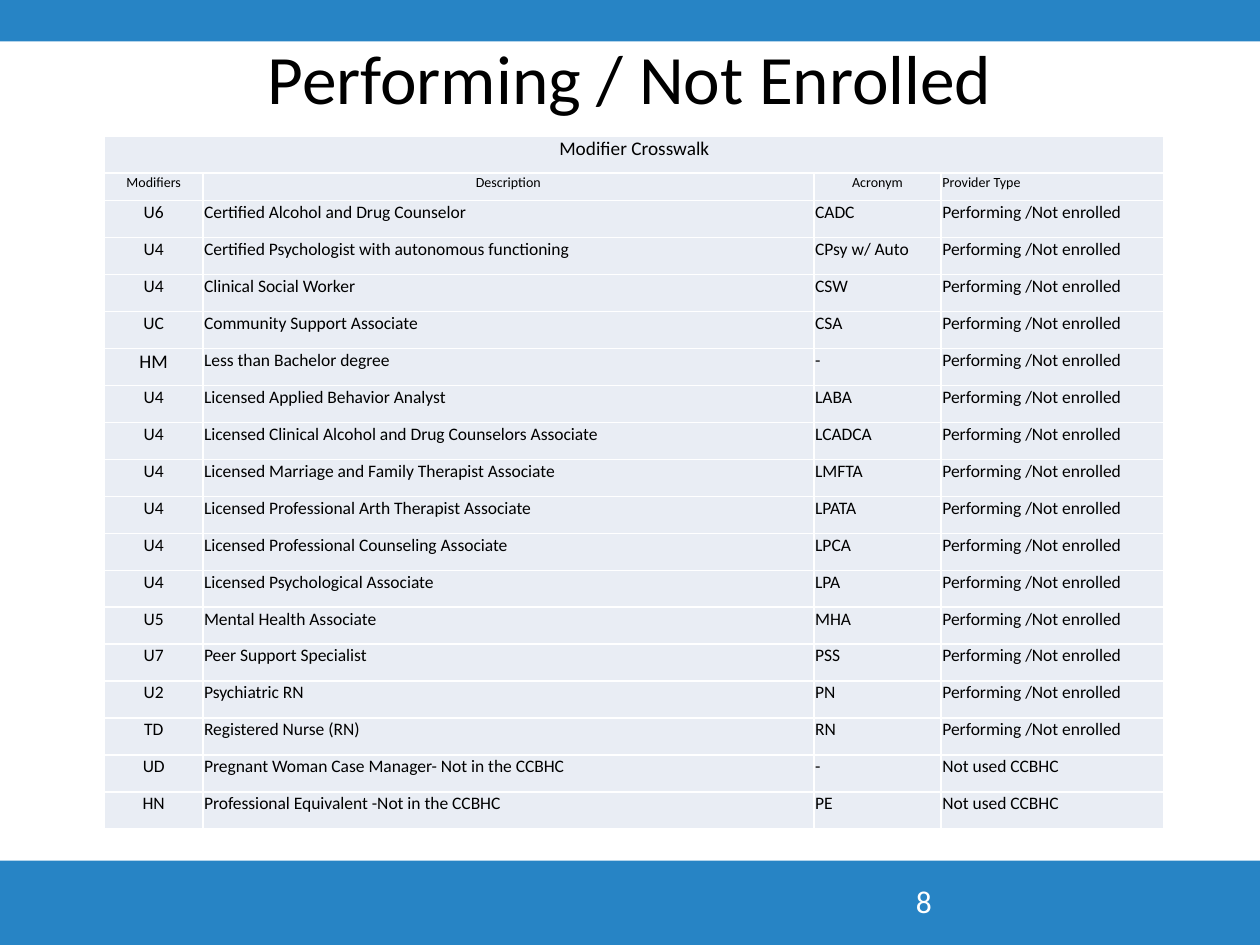
import pptx
import pptx.dml.color
import pptx.enum.shapes
import pptx.enum.text
import pptx.oxml
import pptx.oxml.ns
import pptx.util

Inches, Pt = pptx.util.Inches, pptx.util.Pt
Color = pptx.dml.color.RGBColor
Align = pptx.enum.text.PP_ALIGN
Anchor = pptx.enum.text.MSO_ANCHOR

BLUE = Color(0x27, 0x84, 0xC5)
PALE = Color(0xE9, 0xED, 0xF4)
BLACK = Color(0, 0, 0)
WHITE = Color(0xFF, 0xFF, 0xFF)
FONT = "Calibri"

TITLE = "Performing / Not Enrolled"
PAGE_NUMBER = "8"
TABLE_TITLE = "Modifier Crosswalk"
HEADINGS = ("Modifiers", "Description", "Acronym", "Provider Type")
PERFORMING = "Performing /Not enrolled"
UNUSED = "Not used CCBHC"
PROVIDERS = [
    ("U6", "Certified Alcohol and Drug Counselor", "CADC", PERFORMING),
    ("U4", "Certified Psychologist with autonomous functioning", "CPsy w/ Auto", PERFORMING),
    ("U4", "Clinical Social Worker", "CSW", PERFORMING),
    ("UC", "Community Support Associate", "CSA", PERFORMING),
    ("HM", "Less than Bachelor degree", "-", PERFORMING),
    ("U4", "Licensed Applied Behavior Analyst", "LABA", PERFORMING),
    ("U4", "Licensed Clinical Alcohol and Drug Counselors Associate", "LCADCA", PERFORMING),
    ("U4", "Licensed Marriage and Family Therapist Associate", "LMFTA", PERFORMING),
    ("U4", "Licensed Professional Arth Therapist Associate", "LPATA", PERFORMING),
    ("U4", "Licensed Professional Counseling Associate", "LPCA", PERFORMING),
    ("U4", "Licensed Psychological Associate", "LPA", PERFORMING),
    ("U5", "Mental Health Associate", "MHA", PERFORMING),
    ("U7", "Peer Support Specialist", "PSS", PERFORMING),
    ("U2", "Psychiatric RN", "PN", PERFORMING),
    ("TD", "Registered Nurse (RN)", "RN", PERFORMING),
    ("UD", "Pregnant Woman Case Manager- Not in the CCBHC", "-", UNUSED),
    ("HN", "Professional Equivalent -Not in the CCBHC", "PE", UNUSED),
]

SLIDE_WIDTH, SLIDE_HEIGHT = 10, 7.5
BANDS = [(0, 0.33), (6.83, 0.67)]
TABLE_LEFT, TABLE_TOP, TABLE_HEIGHT = 0.83, 1.08, 5.5
COLUMN_WIDTHS = (0.78, 4.85, 1.01, 1.77)
HEADING_HEIGHT = 0.22


def write(frame, text, size, color=BLACK, align=Align.LEFT):
    para = frame.paragraphs[0]
    para.text = text
    para.alignment = align
    para.font.name, para.font.size = FONT, Pt(size)
    para.font.color.rgb = color


def add_band(page, top, height):
    band = page.shapes.add_shape(
        pptx.enum.shapes.MSO_SHAPE.RECTANGLE,
        0, Inches(top), Inches(SLIDE_WIDTH), Inches(height))
    band.shadow.inherit = False
    band.fill.solid()
    band.fill.fore_color.rgb = BLUE
    band.line.fill.background()


def add_text(page, area, text, size, color, align=Align.LEFT, anchor=Anchor.TOP):
    frame = page.shapes.add_textbox(*map(Inches, area)).text_frame
    frame.word_wrap = True
    frame.vertical_anchor = anchor
    write(frame, text, size, color, align)
    return frame


def style_cell(cell):
    cell.margin_left = cell.margin_top = cell.margin_right = Inches(0.01)
    cell.margin_bottom = 0
    properties = cell._tc.get_or_add_tcPr()
    for side in ("lnL", "lnR", "lnT", "lnB"):
        properties.append(pptx.oxml.parse_xml(
            f'<a:{side} {pptx.oxml.ns.nsdecls("a")} w="{Pt(1)}"><a:solidFill>'
            f'<a:srgbClr val="{WHITE}"/></a:solidFill></a:{side}>'))
    cell.fill.solid()
    cell.fill.fore_color.rgb = PALE


def text_size(row, text):
    if row == 0 or text == "HM":
        return 11
    return 8 if row == 1 else 10


def add_crosswalk(page):
    rows = [(TABLE_TITLE,), HEADINGS, *PROVIDERS]
    row_height = (TABLE_HEIGHT - HEADING_HEIGHT) / (len(rows) - 1)
    table = page.shapes.add_table(
        len(rows), len(COLUMN_WIDTHS), Inches(TABLE_LEFT), Inches(TABLE_TOP),
        Inches(sum(COLUMN_WIDTHS)), Inches(TABLE_HEIGHT)).table
    table.first_row = table.horz_banding = False
    for column, width in zip(table.columns, COLUMN_WIDTHS):
        column.width = Inches(width)
    for cell in table.iter_cells():
        style_cell(cell)
    table.cell(0, 0).merge(table.cell(0, len(COLUMN_WIDTHS) - 1))
    for r, values in enumerate(rows):
        table.rows[r].height = Inches(HEADING_HEIGHT if r == 1 else row_height)
        for c, text in enumerate(values):
            centred = c == 0 or (r == 1 and c < 3)
            write(table.cell(r, c).text_frame, text, text_size(r, text),
                  align=Align.CENTER if centred else Align.LEFT)


def main():
    deck = pptx.Presentation()
    deck.slide_width, deck.slide_height = Inches(SLIDE_WIDTH), Inches(SLIDE_HEIGHT)
    page = deck.slides.add_slide(deck.slide_layouts[6])
    for top, height in BANDS:
        add_band(page, top, height)
    title = add_text(page, (0.5, 0.3, 9, 0.62), TITLE, 39.6, BLACK, Align.CENTER, Anchor.MIDDLE)
    title.margin_top = title.margin_bottom = 0
    add_text(page, (7.17, 6.95, 2.33, 0.4), PAGE_NUMBER, 18, WHITE)
    add_crosswalk(page)
    deck.save("out.pptx")


if __name__ == "__main__":
    main()
